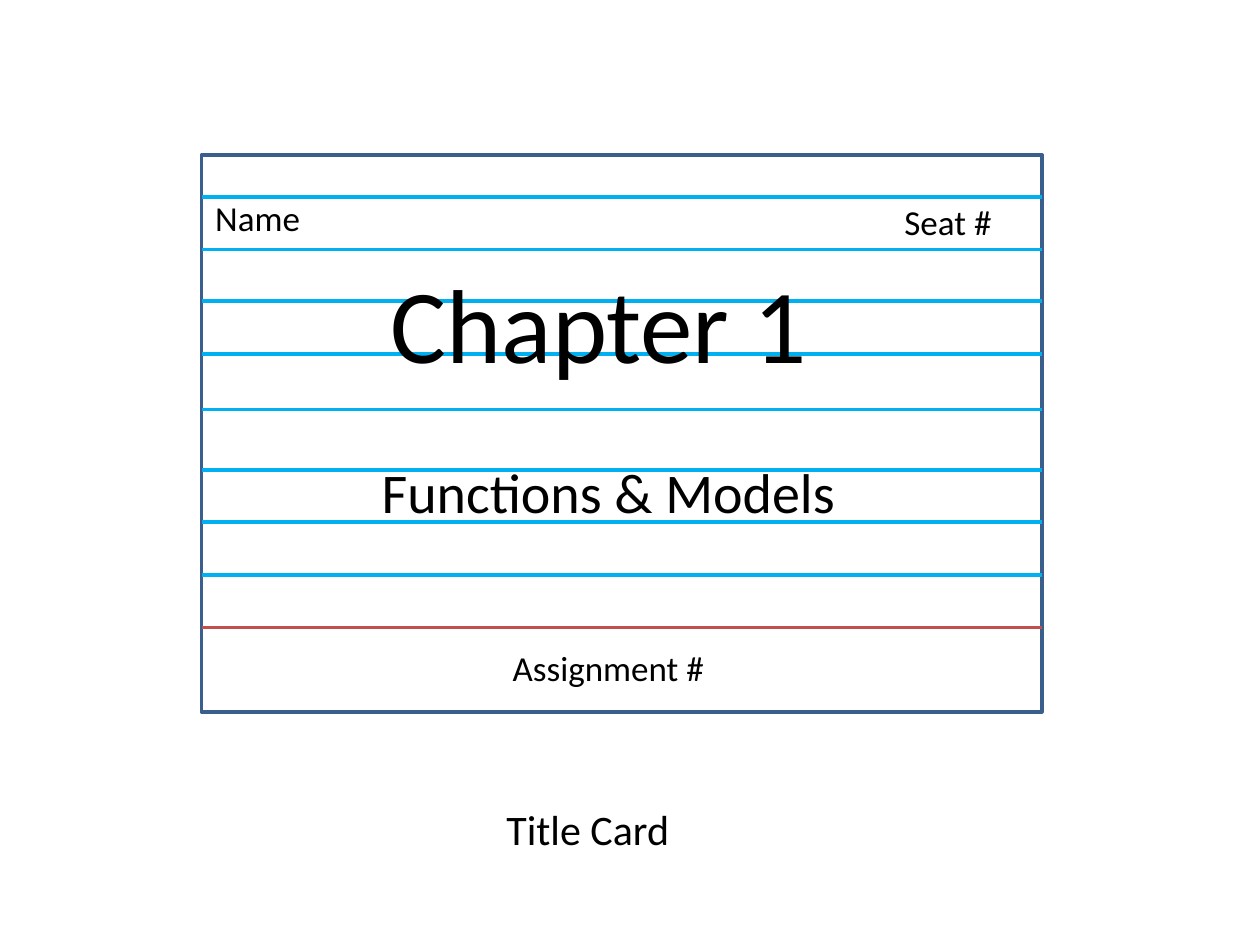
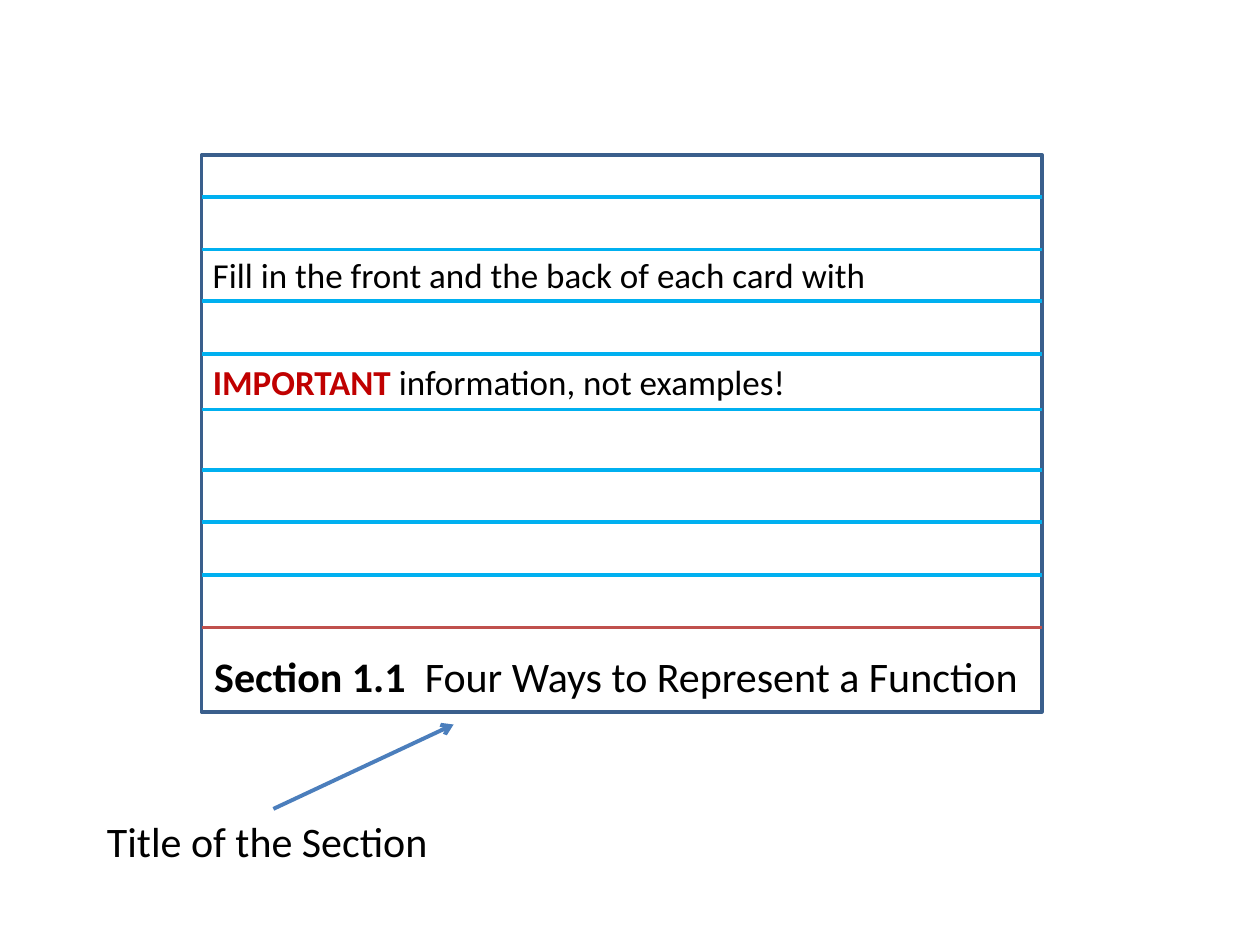
from lxml.etree import SubElement
from pptx import Presentation
from pptx.dml.color import RGBColor
from pptx.enum.shapes import MSO_CONNECTOR, MSO_SHAPE
from pptx.enum.text import MSO_ANCHOR, MSO_AUTO_SIZE, PP_ALIGN
from pptx.oxml.ns import qn
from pptx.util import Inches, Pt

COLORS = {
    "paper": "FFFFFF",
    "border": "3A5F8C",
    "rule": "00B0F0",
    "margin": "C0504D",
    "arrow": "4B7EBC",
    "text": "000000",
    "alert": "C00000",
}
FONT = "Calibri"
TITLE_ONLY = 5
CARD_LEFT, CARD_TOP, CARD_WIDTH, CARD_HEIGHT = 1.6, 1.23, 6.67, 4.42
RULE_TOPS = (1.56, 1.98, 2.39, 2.81, 3.25, 3.73, 4.14, 4.56)
MARGIN_TOP = 4.98


class CardDeck:
    """Draws ruled index cards, one on each slide."""

    def __init__(self):
        self.presentation = Presentation()
        self.presentation.slide_width = Inches(10)
        self.presentation.slide_height = Inches(7.5)
        self.slide = None

    def color(self, name):
        return RGBColor.from_string(COLORS[name])

    def add_slide(self):
        layout = self.presentation.slide_layouts[TITLE_ONLY]
        self.slide = self.presentation.slides.add_slide(layout)
        self.card()

    def card(self):
        shape = self.slide.shapes.add_shape(
            MSO_SHAPE.RECTANGLE, Inches(CARD_LEFT), Inches(CARD_TOP),
            Inches(CARD_WIDTH), Inches(CARD_HEIGHT))
        shape.shadow.inherit = False
        shape.fill.solid()
        shape.fill.fore_color.rgb = self.color("paper")
        shape.line.color.rgb = self.color("border")
        shape.line.width = Pt(2)
        right = CARD_LEFT + CARD_WIDTH
        for top in RULE_TOPS:
            self.line((CARD_LEFT, top), (right, top), "rule")
        self.line((CARD_LEFT, MARGIN_TOP), (right, MARGIN_TOP), "margin")

    def line(self, start, end, color, arrow=False):
        connector = self.slide.shapes.add_connector(
            MSO_CONNECTOR.STRAIGHT, *map(Inches, start + end))
        connector.line.color.rgb = self.color(color)
        connector.line.width = Pt(2.25)
        properties = connector._element.spPr
        if arrow:
            SubElement(properties.find(qn("a:ln")), qn("a:tailEnd"), type="arrow")
        SubElement(properties, qn("a:effectLst"))

    def fill_text(self, shape, runs, size, align):
        frame = shape.text_frame
        frame.word_wrap = False
        frame.auto_size = MSO_AUTO_SIZE.SHAPE_TO_FIT_TEXT
        frame.vertical_anchor = MSO_ANCHOR.TOP
        paragraph = frame.paragraphs[0]
        paragraph.alignment = align
        for text, color, bold in runs:
            run = paragraph.add_run()
            run.text = text
            run.font.name = FONT
            run.font.size = Pt(size)
            run.font.bold = bold
            run.font.color.rgb = self.color(color)

    def text(self, box, *runs, size=20, align=PP_ALIGN.LEFT):
        shape = self.slide.shapes.add_textbox(*map(Inches, box))
        self.fill_text(shape, runs, size, align)

    def title(self, box, *runs, size):
        shape = self.slide.shapes.title
        shape.left, shape.top, shape.width, shape.height = map(Inches, box)
        self.fill_text(shape, runs, size, PP_ALIGN.LEFT)
        self.slide.shapes._spTree.append(shape._element)


def plain(text):
    return text, "text", False


def main():
    deck = CardDeck()

    deck.add_slide()
    deck.text((3.92, 6.33, 1.51, 0.5), plain("Title Card"), size=24)
    deck.title((3, 2, 3.54, 1.11), plain("Chapter 1"), size=60)
    deck.text((2.91, 3.58, 3.84, 0.64), plain("Functions & Models"),
              size=32, align=PP_ALIGN.CENTER)
    deck.text((1.61, 1.51, 0.88, 0.44), plain("Name"))
    deck.text((7.08, 1.54, 0.9, 0.44), plain("Seat #"))
    deck.text((3.97, 5.08, 1.74, 0.44), plain("Assignment #"))

    deck.add_slide()
    deck.text((0.75, 6.42, 2.85, 0.5), plain("Title of the Section"), size=24)
    deck.text((1.59, 1.96, 5.43, 0.44),
              plain("Fill in the front and the back of each card with"))
    deck.text((1.59, 2.81, 4.75, 0.44), ("IMPORTANT ", "alert", True),
              plain("information, not examples!"))
    deck.title((1.6, 5.11, 6.64, 0.5), ("Section 1.1", "text", True),
               plain("  Four Ways to Represent a Function"), size=24)
    deck.line((2.17, 6.42), (3.6, 5.75), "arrow", arrow=True)

    deck.presentation.save("out.pptx")


if __name__ == "__main__":
    main()
